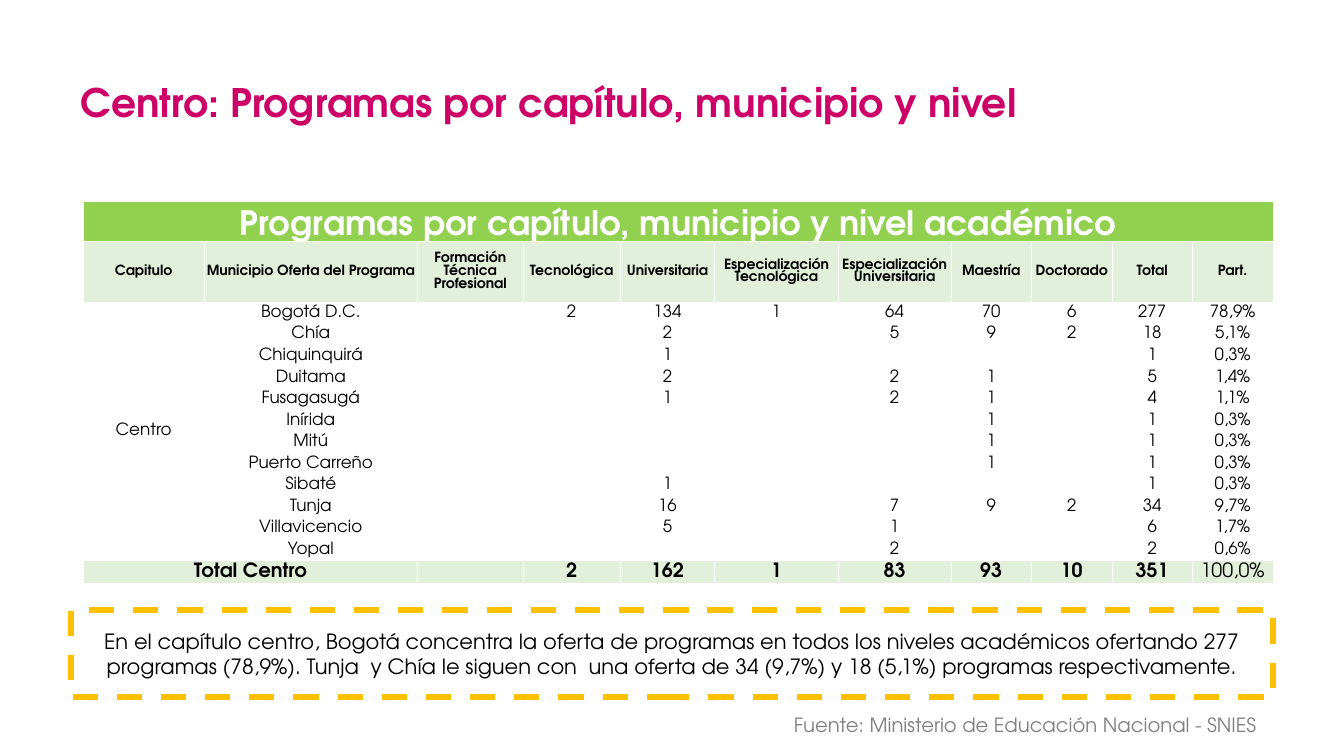
from pptx import Presentation
from pptx.dml.color import RGBColor
from pptx.enum import dml, shapes, text
from pptx.oxml.xmlchemy import OxmlElement
from pptx.util import Pt

FONT = "TeX Gyre Adventor"
MAGENTA = RGBColor(0xCC, 0x00, 0x66)
GREEN = RGBColor(0x92, 0xD0, 0x50)
PALE_GREEN = RGBColor(0xE2, 0xEF, 0xDA)
AMBER = RGBColor(0xFF, 0xC0, 0x00)
GRAY = RGBColor(0x80, 0x80, 0x80)
BLACK = RGBColor(0x00, 0x00, 0x00)
WHITE = RGBColor(0xFF, 0xFF, 0xFF)

LEFT, CENTER, RIGHT = (text.PP_ALIGN.LEFT, text.PP_ALIGN.CENTER,
                       text.PP_ALIGN.RIGHT)
MIDDLE, BOTTOM = text.MSO_ANCHOR.MIDDLE, text.MSO_ANCHOR.BOTTOM

TITLE = "Centro: Programas por capítulo, municipio y nivel"
TABLE_TITLE = "Programas por capítulo, municipio y nivel académico"
HEADERS = ["Capitulo", "Municipio Oferta del Programa",
           "Formación Técnica Profesional", "Tecnológica", "Universitaria",
           "Especialización Tecnológica", "Especialización Universitaria",
           "Maestría", "Doctorado", "Total", "Part."]
PROGRAMS = [
    ["Centro", "Bogotá D.C.", "", "2", "134", "1", "64", "70", "6", "277", "78,9%"],
    ["", "Chía", "", "", "2", "", "5", "9", "2", "18", "5,1%"],
    ["", "Chiquinquirá", "", "", "1", "", "", "", "", "1", "0,3%"],
    ["", "Duitama", "", "", "2", "", "2", "1", "", "5", "1,4%"],
    ["", "Fusagasugá", "", "", "1", "", "2", "1", "", "4", "1,1%"],
    ["", "Inírida", "", "", "", "", "", "1", "", "1", "0,3%"],
    ["", "Mitú", "", "", "", "", "", "1", "", "1", "0,3%"],
    ["", "Puerto Carreño", "", "", "", "", "", "1", "", "1", "0,3%"],
    ["", "Sibaté", "", "", "1", "", "", "", "", "1", "0,3%"],
    ["", "Tunja", "", "", "16", "", "7", "9", "2", "34", "9,7%"],
    ["", "Villavicencio", "", "", "5", "", "1", "", "", "6", "1,7%"],
    ["", "Yopal", "", "", "", "", "2", "", "", "2", "0,6%"],
]
TOTALS = ["Total Centro", "", "", "2", "162", "1", "83", "93", "10", "351", "100,0%"]
COL_WIDTHS = [86.2, 152.7, 75.2, 69.5, 67.5, 88.2, 80.6, 57.5, 57.5, 57.5, 57.5]
SUMMARY = ("En el capítulo centro, Bogotá concentra la oferta de programas en "
           "todos los niveles académicos ofertando 277 programas (78,9%). "
           "Tunja  y Chía le siguen con  una oferta de 34 (9,7%) y 18 (5,1%) "
           "programas respectivamente.")
SOURCE = "Fuente: Ministerio de Educación Nacional - SNIES"

# Formats for each kind of table row
TITLE_ROW = dict(size=24, color=WHITE, bold=True, fill=GREEN, anchor=BOTTOM)
HEADER_ROW = dict(size=10, bold=True, fill=PALE_GREEN)
BODY_ROW = dict(size=12)
TOTAL_ROW = dict(size=14, bold=True, fill=PALE_GREEN)


def write(tf, content, size, color=BLACK, bold=False, align=CENTER):
    p = tf.paragraphs[0]
    p.alignment = align
    p.line_spacing = 1.0
    r = p.add_run()
    r.text = content
    for name, value in dict(name=FONT, size=Pt(size), bold=bold).items():
        setattr(r.font, name, value)
    r.font.color.rgb = color


def place(sp, left, top, width, height):
    box = dict(left=left, top=top, width=width, height=height)
    for name, value in box.items():
        setattr(sp, name, Pt(value))


def format_frame(tf, anchor):
    values = dict(word_wrap=True, vertical_anchor=anchor,
                  auto_size=text.MSO_AUTO_SIZE.SHAPE_TO_FIT_TEXT)
    for name, value in values.items():
        setattr(tf, name, value)


def add_title(s):
    sp = s.shapes.title
    place(sp, 50.4, 52.2, 846, 41)
    format_frame(sp.text_frame, MIDDLE)
    write(sp.text_frame, TITLE, 28, MAGENTA, True, LEFT)


def add_borders(cell):
    tcPr = cell._tc.get_or_add_tcPr()
    for side in ("lnL", "lnR", "lnT", "lnB"):
        ln = OxmlElement(f"a:{side}")
        ln.set("w", str(Pt(0.5)))
        fill = OxmlElement("a:solidFill")
        color = OxmlElement("a:srgbClr")
        color.set("val", str(WHITE))
        fill.append(color)
        ln.append(fill)
        tcPr.append(ln)


def format_cell(cell, content, size, color=BLACK, bold=False, fill=None,
                anchor=MIDDLE):
    margins = dict.fromkeys(
        ("margin_left", "margin_right", "margin_top", "margin_bottom"), 0)
    for name, value in dict(margins, vertical_anchor=anchor).items():
        setattr(cell, name, value)
    add_borders(cell)
    if fill is None:
        cell.fill.background()
    else:
        cell.fill.solid()
        cell.fill.fore_color.rgb = fill
    if content:
        write(cell.text_frame, content, size, color, bold)
    else:
        # Keeps empty cells from stretching the row
        end = OxmlElement("a:endParaRPr")
        end.set("sz", str(size * 100))
        cell.text_frame.paragraphs[0]._p.append(end)


def add_program_table(s):
    rows = [([TABLE_TITLE] + [""] * (len(HEADERS) - 1), 23, TITLE_ROW),
            (HEADERS, 43.5, HEADER_ROW)]
    rows += [(values, 15.37, BODY_ROW) for values in PROGRAMS]
    rows.append((TOTALS, 15.37, TOTAL_ROW))

    height = sum(row_height for _, row_height, _ in rows)
    table = s.shapes.add_table(len(rows), len(HEADERS), Pt(59.5), Pt(143.5),
                               Pt(sum(COL_WIDTHS)), Pt(height)).table
    table.first_row = table.horz_banding = False
    for column, width in zip(table.columns, COL_WIDTHS):
        column.width = Pt(width)
    for i, (values, row_height, style) in enumerate(rows):
        table.rows[i].height = Pt(row_height)
        for j, value in enumerate(values):
            last_total = style is TOTAL_ROW and j == len(values) - 1
            format_cell(table.cell(i, j), value,
                        **(dict(style, bold=False) if last_total else style))

    # Table title, chapter and total label span several cells
    last = len(rows) - 1
    for start, end in (((0, 0), (0, len(HEADERS) - 1)),
                       ((2, 0), (last - 1, 0)),
                       ((last, 0), (last, 1))):
        table.cell(*start).merge(table.cell(*end))


def add_summary(s):
    sp = s.shapes.add_shape(shapes.MSO_SHAPE.RECTANGLE, 0, 0, 0, 0)
    place(sp, 50.6, 435.6, 858.8, 62.4)
    sp.shadow.inherit = False
    sp.fill.solid()
    sp.fill.fore_color.rgb = WHITE
    sp.line.color.rgb = AMBER
    sp.line.width = Pt(4.5)
    sp.line.dash_style = dml.MSO_LINE.DASH
    format_frame(sp.text_frame, MIDDLE)
    write(sp.text_frame, SUMMARY, 15)


def add_source(s):
    sp = s.shapes.add_textbox(0, 0, 0, 0)
    place(sp, 424.8, 505.4, 480, 24.5)
    format_frame(sp.text_frame, text.MSO_ANCHOR.TOP)
    write(sp.text_frame, SOURCE, 14, GRAY, align=RIGHT)


def main():
    prs = Presentation()
    prs.slide_width, prs.slide_height = Pt(960), Pt(540)
    s = prs.slides.add_slide(prs.slide_layouts[5])
    add_title(s)
    add_summary(s)
    add_program_table(s)
    add_source(s)
    prs.save("out.pptx")


if __name__ == "__main__":
    main()
